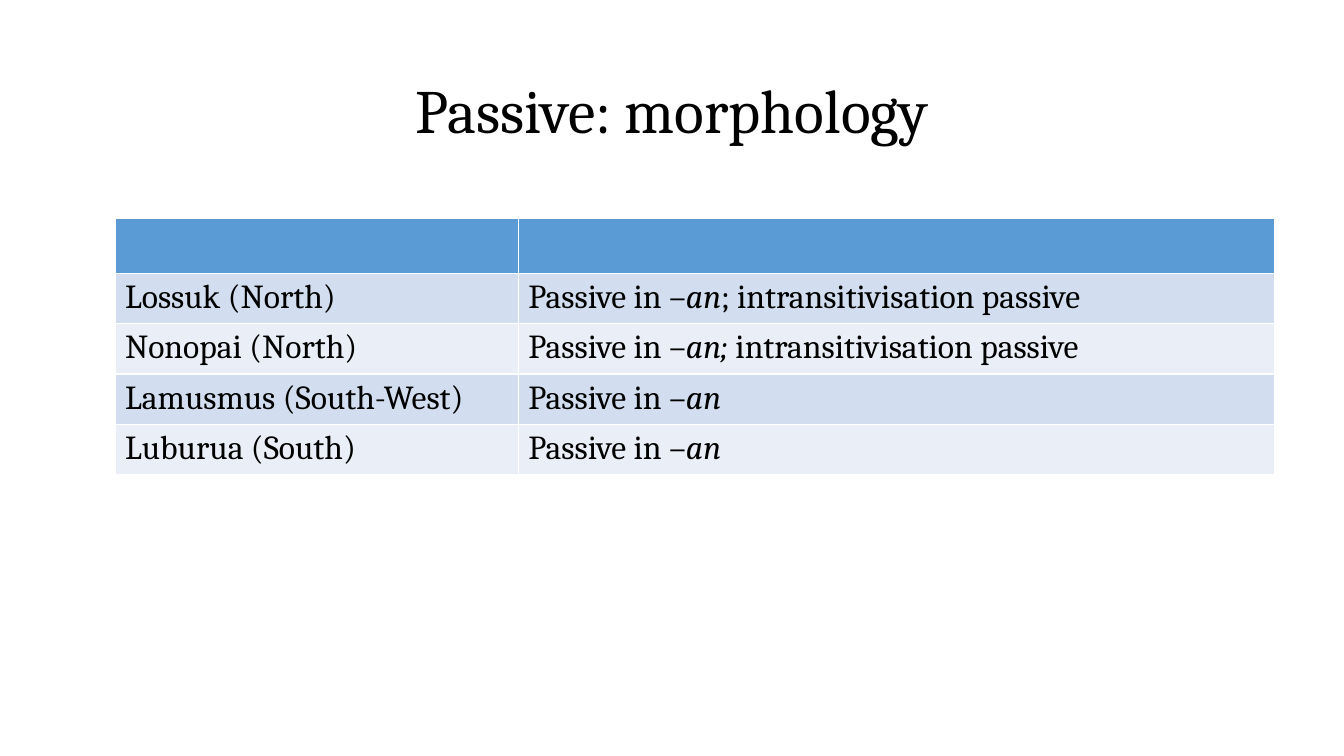
"""Build a slide with a table of passive morphology by dialect."""
from pptx import Presentation
from pptx.dml.color import RGBColor
from pptx.enum.text import MSO_ANCHOR, PP_ALIGN
from pptx.util import Inches, Pt

TITLE = "Passive: morphology"
FONT = "Cambria"
BLACK, HEADER_FILL = "000000", "5B9BD5"
BAND_FILLS = ["D2DEEF", "EAEFF7"]
COLUMN_WIDTHS = [4, 7.5]
HEADER_HEIGHT, ROW_HEIGHT = 0.54, 0.48

# Each cell is a list of (text, italic) runs.
PASSIVE = [("Passive in –", False), ("an", True)]
ROWS = [
    [[], []],
    [[("Lossuk (North)", False)], PASSIVE + [("; intransitivisation passive", False)]],
    [[("Nonopai (North)", False)],
     [PASSIVE[0], ("an; ", True), ("intransitivisation passive", False)]],
    [[("Lamusmus (South-West)", False)], PASSIVE],
    [[("Luburua (South)", False)], PASSIVE],
]


def color(hex_string):
    return RGBColor.from_string(hex_string)


def style(paragraph, size):
    paragraph.font.name = FONT
    paragraph.font.size = Pt(size)
    paragraph.font.color.rgb = color(BLACK)


def add_title(slide):
    box = slide.shapes.add_textbox(Inches(0.92), Inches(0.4), Inches(11.5), Inches(1.45))
    frame = box.text_frame
    frame.word_wrap = True
    frame.vertical_anchor = MSO_ANCHOR.MIDDLE
    paragraph = frame.paragraphs[0]
    paragraph.text = TITLE
    paragraph.alignment = PP_ALIGN.CENTER
    paragraph.line_spacing = 0.9
    style(paragraph, 44)


def add_dialect_table(slide):
    heights = [HEADER_HEIGHT] + [ROW_HEIGHT] * (len(ROWS) - 1)
    table = slide.shapes.add_table(
        len(ROWS), len(COLUMN_WIDTHS), Inches(1.14), Inches(2.17),
        Inches(sum(COLUMN_WIDTHS)), Inches(sum(heights))).table
    for column, width in zip(table.columns, COLUMN_WIDTHS):
        column.width = Inches(width)
    for index, (row, height, contents) in enumerate(zip(table.rows, heights, ROWS)):
        row.height = Inches(height)
        fill = BAND_FILLS[(index - 1) % 2] if index else HEADER_FILL
        for cell, runs in zip(row.cells, contents):
            cell.fill.solid()
            cell.fill.fore_color.rgb = color(fill)
            paragraph = cell.text_frame.paragraphs[0]
            style(paragraph, 24)
            for text, italic in runs:
                run = paragraph.add_run()
                run.text = text
                run.font.italic = italic


def main():
    presentation = Presentation()
    presentation.slide_width = Inches(13.33)
    presentation.slide_height = Inches(7.5)
    slide = presentation.slides.add_slide(presentation.slide_layouts[6])
    add_title(slide)
    add_dialect_table(slide)
    presentation.save("out.pptx")


if __name__ == "__main__":
    main()
